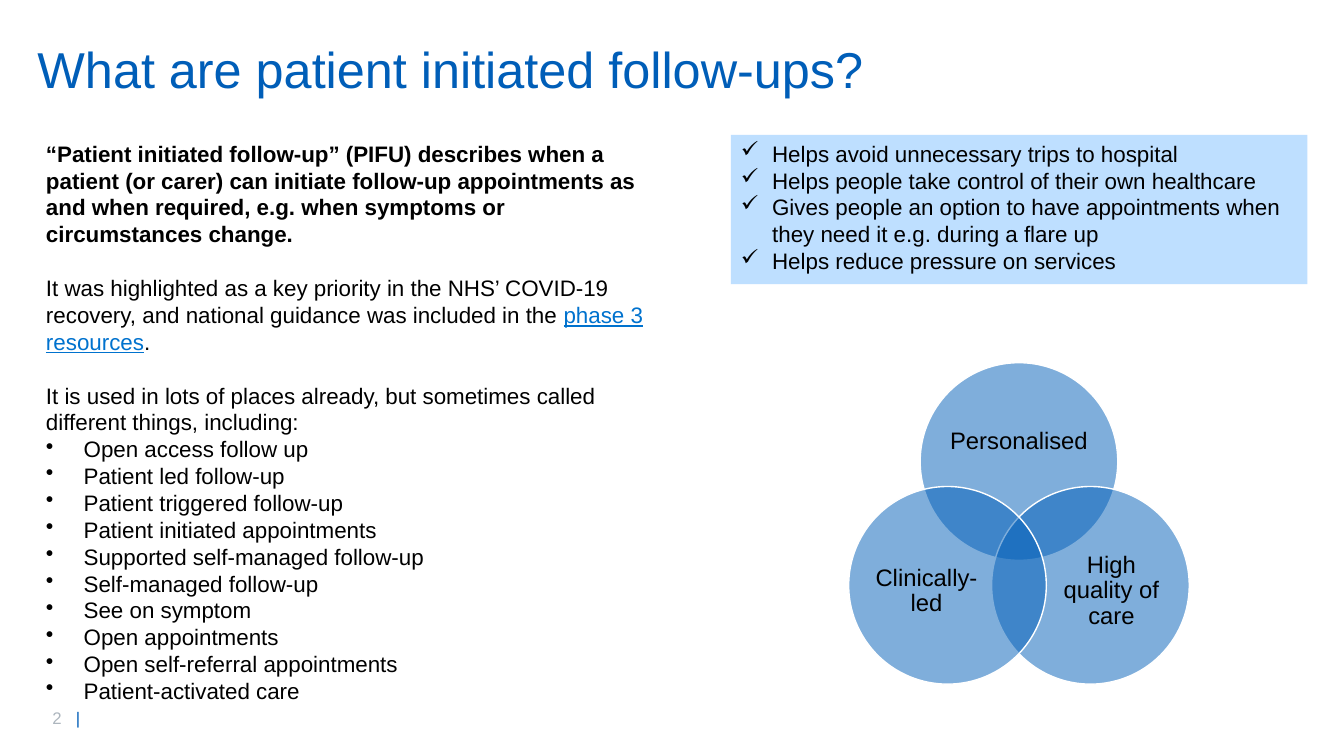
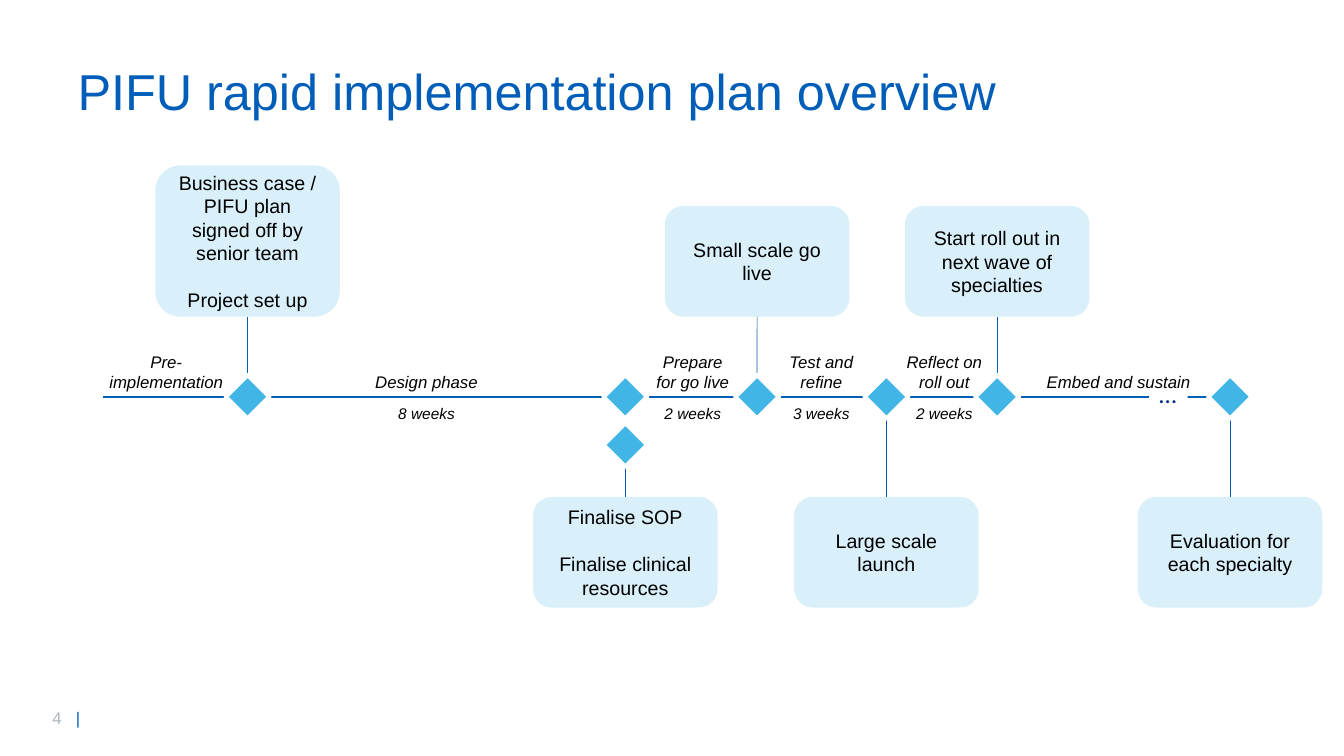
"""Two slides on patient initiated follow-up: what it is and how it is rolled out."""
import math
from typing import NamedTuple

from lxml import etree
from pptx import Presentation
from pptx import util as u
from pptx.dml.color import RGBColor
from pptx.enum import shapes, text
from pptx.oxml.ns import qn

BLUE = RGBColor(0x00, 0x5E, 0xB8)
LINK_BLUE = RGBColor(0x00, 0x72, 0xCE)
NAVY = RGBColor(0x00, 0x30, 0x87)
SKY = RGBColor(0x41, 0xB6, 0xE6)
PALE_SKY = RGBColor(0xD9, 0xF0, 0xFA)
PALE_BLUE = RGBColor(0xBE, 0xDF, 0xFF)
GREY = RGBColor(0xAD, 0xB6, 0xBE)
BLACK = RGBColor(0, 0, 0)
WHITE = RGBColor(0xFF, 0xFF, 0xFF)

SHAPE = shapes.MSO_SHAPE
CENTER = text.PP_ALIGN.CENTER
LEFT = text.PP_ALIGN.LEFT
TOP = text.MSO_ANCHOR.TOP
MIDDLE = text.MSO_ANCHOR.MIDDLE
BOTTOM = text.MSO_ANCHOR.BOTTOM
SIDE_TOP, SIDE_BOTTOM = 0, 2


class Line(NamedTuple):
    """A paragraph; in a tuple of texts every second one is a link."""
    content: str | tuple
    gap: float = 0
    bold: bool = False
    bullet: str = ""
    indent: float = 0


def cm(*lengths):
    """Turn centimetres into lengths."""
    return [u.Cm(length) for length in lengths]


class Deck:
    """Holds the shared style and the current slide."""

    def __init__(self):
        """Open a widescreen presentation."""
        self.presentation = Presentation()
        self.presentation.slide_width, self.presentation.slide_height = cm(33.87, 19.05)
        self.slide = None

    def new_slide(self, title, number, at):
        """Add a slide with its title and page number."""
        self.slide = self.presentation.slides.add_slide(self.presentation.slide_layouts[5])
        shape = self.slide.shapes.title
        shape.left, shape.top, shape.width, shape.height = cm(*at)
        shape.text_frame.auto_size = text.MSO_AUTO_SIZE.NONE
        self.fill_text(shape, [Line(title)], 36, BLUE, anchor=MIDDLE, spacing=0.9)
        self.page_number(number)

    def page_number(self, number):
        """Add the page number followed by a bar at a tab stop."""
        box = self.slide.shapes.add_textbox(*cm(1.07, 17.7, 2.39, 0.76))
        paragraph = box.text_frame.paragraphs[0]
        tabs = etree.SubElement(paragraph._p.get_or_add_pPr(), qn("a:tabLst"))
        etree.SubElement(tabs, qn("a:tab"), pos=str(u.Cm(0.59)), algn="l")
        for content, color in ((f"{number}\t", GREY), ("|", BLUE)):
            run = paragraph.add_run()
            run.text = content
            run.font.color.rgb = color
        paragraph.font.size, paragraph.font.name = u.Pt(12), "Arial"

    def fill_text(self, shape, lines, size, color=BLACK, align=LEFT, anchor=TOP,
                  italic=None, spacing=None, font="Arial", wrap=True):
        """Fill a shape with paragraphs."""
        frame = shape.text_frame
        frame.word_wrap = wrap
        frame.vertical_anchor = anchor
        for index, line in enumerate(lines):
            paragraph = frame.paragraphs[0] if index == 0 else frame.add_paragraph()
            if line.bullet:
                properties = paragraph._p.get_or_add_pPr()
                properties.set("marL", str(u.Cm(line.indent)))
                properties.set("indent", str(-u.Cm(line.indent)))
                etree.SubElement(properties, qn("a:buChar"), char=line.bullet)
            parts = (line.content,) if isinstance(line.content, str) else line.content
            for position, part in enumerate(parts):
                run = paragraph.add_run()
                run.text = part
                if position % 2:
                    run.font.color.rgb = LINK_BLUE
                    run.font.underline = True
            paragraph.alignment = align
            if spacing:
                paragraph.line_spacing = spacing
            if line.gap:
                paragraph.space_before = u.Pt(line.gap)
            paragraph.font.name, paragraph.font.size = font, u.Pt(size)
            paragraph.font.color.rgb = color
            paragraph.font.bold, paragraph.font.italic = line.bold, italic

    def text_box(self, at, lines, size, **style):
        """Add a text box."""
        box = self.slide.shapes.add_textbox(*cm(*at))
        self.fill_text(box, lines, size, **style)
        return box

    def shape(self, kind, at, fill, outline=None, width=1):
        """Add a filled shape, outlined if a colour is given."""
        shape = self.slide.shapes.add_shape(kind, *cm(*at))
        shape.shadow.inherit = False
        shape.fill.solid()
        shape.fill.fore_color.rgb = fill
        if outline is None:
            shape.line.fill.background()
        else:
            shape.line.color.rgb = outline
            shape.line.width = u.Pt(width)
        return shape

    def line(self, x1, y1, x2, y2, width):
        """Add a straight blue line."""
        connector = self.slide.shapes.add_connector(
            shapes.MSO_CONNECTOR.STRAIGHT, *cm(x1, y1, x2, y2))
        connector.line.color.rgb = BLUE
        connector.line.width = u.Pt(width)
        etree.SubElement(connector._element.spPr, qn("a:effectLst"))
        return connector

    def venn_circle(self, x, y, diameter):
        """Add a half-transparent circle around a centre."""
        radius = diameter / 2
        circle = self.shape(SHAPE.OVAL, (x - radius, y - radius, diameter, diameter), BLUE, WHITE)
        color = circle._element.spPr.find(qn("a:solidFill")).find(qn("a:srgbClr"))
        etree.SubElement(color, qn("a:alpha"), val="50000")

    def venn_label(self, x, y, width, height, label):
        """Add a label without insets around a centre."""
        box = self.text_box((x - width / 2, y - height / 2, width, height), [Line(label)], 17,
                            align=CENTER, anchor=MIDDLE, spacing=0.9)
        frame = box.text_frame
        frame.margin_left = frame.margin_top = frame.margin_right = frame.margin_bottom = 0

    def milestone_box(self, x, top, height, lines):
        """Add a rounded box centred on a milestone."""
        width = 4.65
        box = self.shape(SHAPE.ROUNDED_RECTANGLE, (x - width / 2, top, width, height), PALE_SKY)
        self.fill_text(box, lines, 14, align=CENTER, anchor=MIDDLE)
        return box

    def diamond(self, x, y):
        """Add a milestone marker around a centre."""
        size = 1.1
        return self.shape(SHAPE.DIAMOND, (x - size / 2, y - size / 2, size, size), SKY, WHITE, 3)


def definition_slide(deck):
    """Build the slide that explains patient initiated follow-up."""
    deck.new_slide("What are patient initiated follow-ups?", 2, (0.69, 0.97, 23.34, 1.7))
    blank_line = 19.2
    other_names = (
        "Open access follow up", "Patient led follow-up", "Patient triggered follow-up",
        "Patient initiated appointments", "Supported self-managed follow-up",
        "Self-managed follow-up", "See on symptom", "Open appointments",
        "Open self-referral appointments", "Patient-activated care")
    deck.text_box((0.91, 3.4, 16, 14.63), [
        Line("“Patient initiated follow-up” (PIFU) describes when a patient (or carer) can "
             "initiate follow-up appointments as and when required, e.g. when symptoms or "
             "circumstances change.", bold=True),
        Line(("It was highlighted as a key priority in the NHS’ COVID-19 recovery, and national "
              "guidance was included in the ", "phase 3 resources", "."), gap=blank_line),
        Line("It is used in lots of places already, but sometimes called different things, "
             "including:", gap=blank_line),
        *(Line(name, bullet="•", indent=0.95) for name in other_names)], 16)

    benefits = (
        "Helps avoid unnecessary trips to hospital",
        "Helps people take control of their own healthcare",
        "Gives people an option to have appointments when they need it e.g. during a flare up",
        "Helps reduce pressure on services")
    panel = deck.shape(SHAPE.RECTANGLE, (18.42, 3.4, 14.53, 3.76), PALE_BLUE)
    deck.fill_text(panel, [Line(benefit, bullet="✓", indent=0.79) for benefit in benefits], 16)

    center_x, center_y, orbit = 25.68, 13.71, 2.08
    for angle, label, dx, dy, width, height in (
            (-90, "Personalised", 0, -2.57, 3.66, 2.24),
            (30, "High quality of care", 2.33, 1.19, 3, 2.74),
            (150, "Clinically-led", -2.33, 1.19, 3, 2.74)):
        turn = math.radians(angle)
        deck.venn_circle(center_x + orbit * math.cos(turn), center_y + orbit * math.sin(turn), 4.98)
        deck.venn_label(center_x + dx, center_y + dy, width, height, label)


def timeline_slide(deck):
    """Build the slide with the implementation timeline."""
    deck.new_slide("PIFU rapid implementation plan overview", 4, (1.7, 1.52, 24.33, 1.7))
    axis, second_row, blank_line = 10, 11.21, 16.8
    upper_bottom, lower_top, box_height, tall_height = 7.98, 12.52, 2.79, 3.81
    milestones = (
        (6.24, axis, True, tall_height,
         ("Business case / PIFU plan signed off by senior team", "Project set up")),
        (15.76, second_row, False, box_height, ("Finalise SOP", "Finalise clinical resources")),
        (19.08, axis, True, box_height, ("Small scale go live",)),
        (22.34, axis, False, box_height, ("Large scale launch",)),
        (25.13, axis, True, box_height, ("Start roll out in next wave of specialties",)),
        (31, axis, False, box_height, ("Evaluation for each specialty",)))

    stems = []
    for x, y, above, height, texts in milestones:
        top = upper_bottom - height if above else lower_top
        lines = [Line(content, gap=blank_line if index else 0)
                 for index, content in enumerate(texts)]
        box = deck.milestone_box(x, top, height, lines)
        stem = deck.line(x, upper_bottom if above else lower_top, x, y, 0.5)
        stem.begin_connect(box, SIDE_BOTTOM if above else SIDE_TOP)
        stems.append(stem)

    deck.line(2.59, axis, 31.37, axis, 1.5)
    for stem, (x, y, above, _, _) in zip(stems, milestones):
        if y != axis:
            deck.diamond(x, axis)
        stem.end_connect(deck.diamond(x, y), SIDE_TOP if above else SIDE_BOTTOM)
    pause = deck.shape(SHAPE.RECTANGLE, (28.96, 9.42, 0.97, 1.02), WHITE)
    deck.fill_text(pause, [Line("…")], 18, NAVY, font="Calibri", wrap=False)

    label_height = 1.27
    for x, width, phase, duration in (
            (4.19, 3.45, "Pre-implementation", ""),
            (10.75, 3.45, "Design phase", "8 weeks"),
            (17.46, 2.41, "Prepare for go live", "2 weeks"),
            (20.7, 2.41, "Test and refine", "3 weeks"),
            (23.8, 2.49, "Reflect on roll out", "2 weeks"),
            (28.19, 5.03, "Embed and sustain", "")):
        left = x - width / 2
        deck.text_box((left, axis - label_height, width, label_height), [Line(phase)], 12,
                      align=CENTER, anchor=BOTTOM, italic=True)
        if duration:
            deck.text_box((left, axis + 0.06, width, 0.74), [Line(duration)], 11,
                          align=CENTER, italic=True)


def main():
    """Build and save the presentation."""
    deck = Deck()
    definition_slide(deck)
    timeline_slide(deck)
    deck.presentation.save("out.pptx")


if __name__ == "__main__":
    main()
